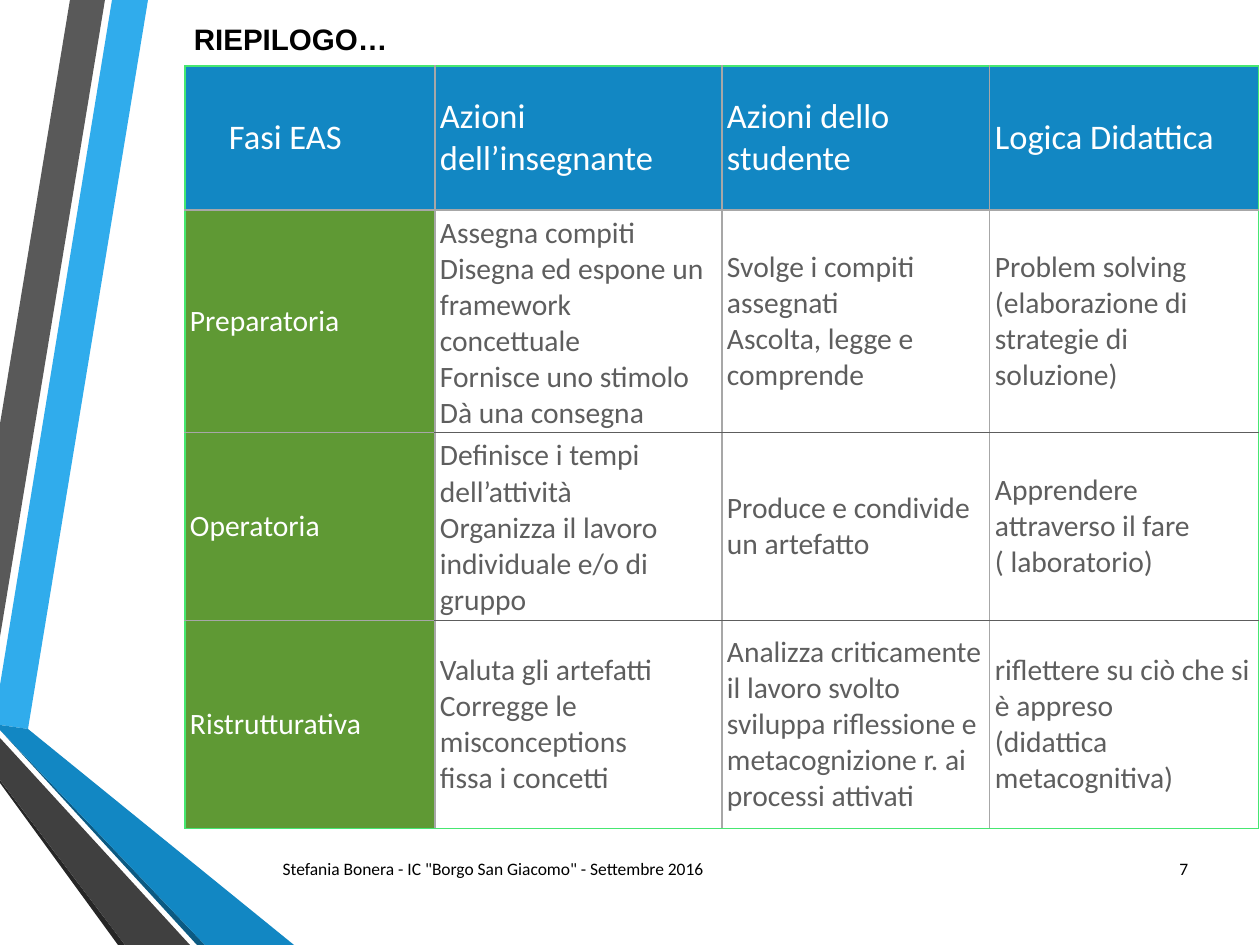
from lxml.etree import SubElement
from pptx import Presentation
from pptx.dml.color import RGBColor
from pptx.enum.text import MSO_ANCHOR, MSO_AUTO_SIZE, PP_ALIGN
from pptx.oxml import parse_xml
from pptx.oxml.ns import nsdecls, qn
from pptx.util import Pt

PX = 10321  # EMU per pixel
BLUE, GREEN, WHITE, BLACK = "1287C3", "5F9934", "FFFFFF", "000000"
BODY_TEXT, EDGE, GRID, ROW_RULE = "5E5E5E", "46E771", "A7A7A7", "5D5D5D"

RIBBONS = [
    ("30ACEC", [(0, 685), (0, 725), (28, 729), (148, 0), (112, 0)]),
    ("595959", [(105, 0), (70, 0), (0, 424), (0, 637)]),
    ("262626", [(0, 780), (0, 783), (118, 945), (125, 945)]),
    ("0C5A82", [(0, 730), (197, 945), (205, 945)]),
    (BLUE, [(0, 730), (205, 945), (294, 945), (28, 729), (0, 725)]),
    ("404040", [(0, 780), (125, 945), (190, 945), (0, 738)]),
]
COLUMN_WIDTHS = [250, 287, 268, 269]
ROW_HEIGHTS = [144, 223, 187, 208]
PHASES = [
    ["Fasi EAS", "Azioni dell’insegnante", "Azioni dello studente", "Logica Didattica"],
    ["Preparatoria",
     "Assegna compiti\nDisegna ed espone un framework\vconcettuale\n"
     "Fornisce uno stimolo\nDà una consegna",
     "Svolge i compiti assegnati\nAscolta, legge e comprende",
     "Problem solving\n(elaborazione di strategie di soluzione)"],
    ["Operatoria",
     "Definisce i tempi dell’attività\nOrganizza il lavoro individuale e/o di gruppo",
     "Produce e condivide un artefatto",
     "Apprendere attraverso il fare ( laboratorio)"],
    ["Ristrutturativa",
     "Valuta gli artefatti\nCorregge le misconceptions\nfissa i concetti",
     "Analizza criticamente il lavoro svolto\n"
     "sviluppa riflessione e metacognizione r. ai processi attivati",
     "riflettere su ciò che si è appreso\n(didattica metacognitiva)"],
]


def color(hex_string):
    return RGBColor.from_string(hex_string)


def scaled(box):
    return [length * PX for length in box]


def format_text(text_frame, size, hex_string, font_name="Calibri", bold=False,
                alignment=PP_ALIGN.LEFT):
    for paragraph in text_frame.paragraphs:
        paragraph.alignment = alignment
        font = paragraph.font
        font.size, font.name, font.bold = Pt(size), font_name, bold
        font.color.rgb = color(hex_string)


def add_ribbons(slide):
    for fill, points in RIBBONS:
        builder = slide.shapes.build_freeform(*points[0], scale=PX)
        builder.add_line_segments(points[1:], close=True)
        shape = builder.convert_to_shape()
        shape.shadow.inherit = False
        shape.fill.solid()
        shape.fill.fore_color.rgb = color(fill)
        shape.line.fill.background()


def place_title(slide, box):
    title = slide.shapes.title
    title.left, title.top, title.width, title.height = scaled(box)
    text_frame = title.text_frame
    text_frame.text = "RIEPILOGO…"
    text_frame.auto_size = MSO_AUTO_SIZE.NONE
    text_frame.vertical_anchor = MSO_ANCHOR.TOP
    format_text(text_frame, 24, BLACK, "Arial", bold=True)


def set_borders(cell, sides):
    properties = cell._tc.tcPr
    for index, (side, hex_string) in enumerate(sides):
        line = parse_xml(f'<a:ln{side} {nsdecls("a")} w="12700"/>')
        fill = SubElement(line, qn("a:solidFill"))
        SubElement(fill, qn("a:srgbClr"), val=hex_string)
        properties.insert(index, line)


def format_cell(cell, row, column):
    last_row, last_column = len(ROW_HEIGHTS) - 1, len(COLUMN_WIDTHS) - 1
    header, phase_name = row == 0, column == 0
    cell.text = PHASES[row][column]
    cell.vertical_anchor = MSO_ANCHOR.MIDDLE
    cell.margin_left = (44 if header and phase_name else 5) * PX
    cell.margin_right = cell.margin_top = cell.margin_bottom = 5 * PX
    cell.fill.solid()
    cell.fill.fore_color.rgb = color(BLUE if header else GREEN if phase_name else WHITE)
    format_text(cell.text_frame, 28 if header else 24,
                WHITE if header or phase_name else BODY_TEXT)
    top_rule = GRID if phase_name or row == 1 else ROW_RULE
    bottom_rule = GRID if phase_name or header else ROW_RULE
    set_borders(cell, [
        ("L", EDGE if phase_name else GRID),
        ("R", EDGE if column == last_column else GRID),
        ("T", EDGE if header else top_rule),
        ("B", EDGE if row == last_row else bottom_rule),
    ])


def add_phase_table(slide, left, top):
    box = (left, top, sum(COLUMN_WIDTHS), sum(ROW_HEIGHTS))
    table = slide.shapes.add_table(
        len(ROW_HEIGHTS), len(COLUMN_WIDTHS), *scaled(box)).table
    table.first_row = table.horz_banding = False
    for column, width in zip(table.columns, COLUMN_WIDTHS):
        column.width = width * PX
    for row_index, height in enumerate(ROW_HEIGHTS):
        table.rows[row_index].height = height * PX
        for column_index in range(len(COLUMN_WIDTHS)):
            format_cell(table.cell(row_index, column_index), row_index, column_index)


def add_footer_text(slide, box, text, alignment):
    text_frame = slide.shapes.add_textbox(*scaled(box)).text_frame
    text_frame.word_wrap = True
    text_frame.vertical_anchor = MSO_ANCHOR.MIDDLE
    text_frame.text = text
    format_text(text_frame, 14.2, BLACK, alignment=alignment)


def main():
    presentation = Presentation()
    presentation.slide_width, presentation.slide_height = scaled((1260, 945))
    slide = presentation.slides.add_slide(presentation.slide_layouts[5])

    # Decoration on the left
    add_ribbons(slide)

    # Footer line
    add_footer_text(slide, (274, 843, 733, 51),
                    'Stefania Bonera - IC "Borgo San Giacomo" - Settembre 2016', PP_ALIGN.LEFT)
    add_footer_text(slide, (1140, 843, 57, 51), "7", PP_ALIGN.RIGHT)

    # Summary table and its title
    add_phase_table(slide, 185, 66)
    place_title(slide, (185, 17, 414, 44))

    presentation.save("out.pptx")


if __name__ == "__main__":
    main()
